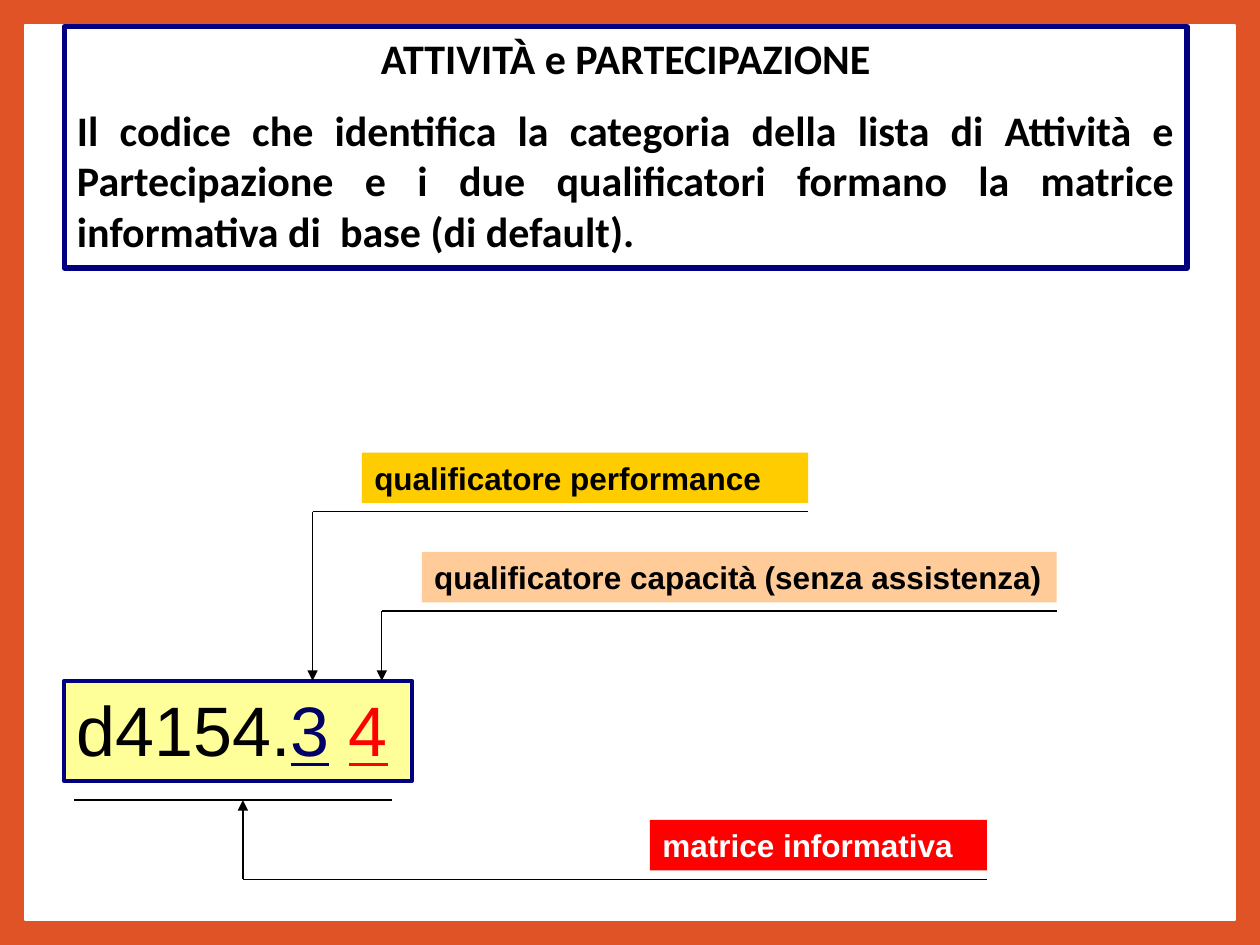
from lxml.etree import SubElement
from pptx import Presentation
from pptx.dml.color import RGBColor
from pptx.enum.shapes import MSO_CONNECTOR, MSO_SHAPE
from pptx.enum.text import MSO_ANCHOR, MSO_AUTO_SIZE, PP_ALIGN
from pptx.oxml.ns import qn
from pptx.util import Pt

COLORS = {
    "frame": "DF5327", "white": "FFFFFF", "black": "000000", "navy": "000080",
    "digit": "000066", "yellow": "FFFF99", "gold": "FFCC00", "peach": "FFCC99",
    "red": "FF0000",
}
RGB = {name: RGBColor.from_string(value) for name, value in COLORS.items()}


def write(p, text, font="Arial", size=18, color="black", bold=False, underline=False):
    r = p.add_run()
    r.text = text
    r.font.name = font
    r.font.size = Pt(size)
    r.font.bold = bold
    r.font.underline = underline
    r.font.color.rgb = RGB[color]


def add_box(left, top, width, height, fill, line=None, line_width=1):
    sp = s.shapes.add_shape(MSO_SHAPE.RECTANGLE, Pt(left), Pt(top), Pt(width), Pt(height))
    sp.shadow.inherit = False
    sp.fill.solid()
    sp.fill.fore_color.rgb = RGB[fill]
    if line:
        sp.line.color.rgb = RGB[line]
        sp.line.width = Pt(line_width)
    else:
        sp.line.fill.background()
    tf = sp.text_frame
    tf.word_wrap = True
    tf.vertical_anchor = MSO_ANCHOR.TOP
    tf.paragraphs[0].alignment = PP_ALIGN.LEFT
    return sp


prs = Presentation()
prs.slide_width = Pt(720)
prs.slide_height = Pt(540)
s = prs.slides.add_slide(prs.slide_layouts[5])
s.background.fill.solid()
s.background.fill.fore_color.rgb = RGB["frame"]

title = s.shapes.title
panel = add_box(14.4, 14.4, 691.2, 511.2, "white", "white")
title._element.addprevious(panel._element)

title.left, title.top, title.width, title.height = Pt(36.8), Pt(15.2), Pt(641.6), Pt(138)
title.line.color.rgb = RGB["navy"]
title.line.width = Pt(3)
tf = title.text_frame
tf.word_wrap = True
tf.auto_size = MSO_AUTO_SIZE.NONE
tf.vertical_anchor = MSO_ANCHOR.TOP
p = tf.paragraphs[0]
p.alignment = PP_ALIGN.CENTER
write(p, "ATTIVITÀ e PARTECIPAZIONE", font="Calibri", size=24, bold=True)
p = tf.add_paragraph()
p.alignment = PP_ALIGN.JUSTIFY
p.space_before = Pt(12)
write(p, "Il codice che identifica la categoria della lista di Attività e Partecipazione "
      "e i due qualificatori formano la matrice informativa di  base (di default).",
      font="Calibri", size=24, bold=True)

code = add_box(36.8, 389, 198.6, 57.4, "yellow", "navy", 2.25)
p = code.text_frame.paragraphs[0]
write(p, "d4154.", size=40)
write(p, "3", size=40, color="digit", underline=True)
write(p, " ", size=40)
write(p, "4", size=40, color="red", underline=True)

labels = [
    ("qualificatore performance", 206.8, 258.6, 255.1, "gold", "black"),
    ("qualificatore capacità (senza assistenza)", 241, 315.4, 362.8, "peach", "black"),
    ("matrice informativa", 371.4, 468.6, 192.6, "red", "white"),
]
for text, left, top, width, fill, color in labels:
    sp = add_box(left, top, width, 28.8, fill)
    write(sp.text_frame.paragraphs[0], text, color=color, bold=True)

lines = [
    (178.6, 292.5, 178.6, 389, True),
    (178.6, 292.5, 461.9, 292.5, False),
    (218.2, 349.2, 218.2, 389, True),
    (218.2, 349.2, 603.8, 349.2, False),
    (138.8, 502.4, 138.8, 457.2, True),
    (138.8, 502.4, 564, 502.4, False),
    (42.5, 457.2, 223.9, 457.2, False),
]
for x1, y1, x2, y2, arrow in lines:
    line = s.shapes.add_connector(MSO_CONNECTOR.STRAIGHT, Pt(x1), Pt(y1), Pt(x2), Pt(y2))
    line.line.color.rgb = RGB["black"]
    line.line.width = Pt(0.75)
    if arrow:
        SubElement(line.line._get_or_add_ln(), qn("a:tailEnd"), type="triangle")
    SubElement(line._element.spPr, qn("a:effectLst"))

prs.save("out.pptx")
